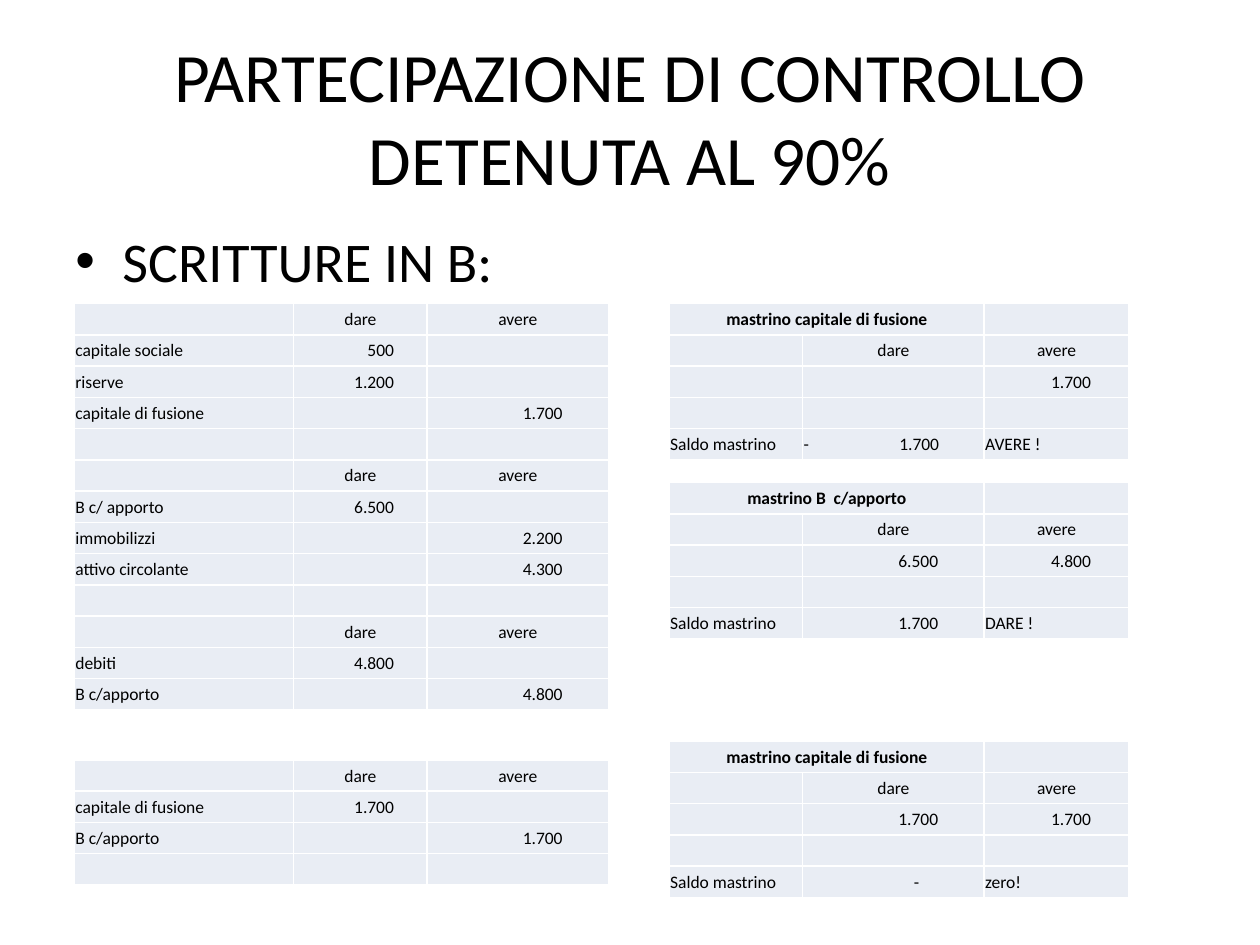
"""Build a slide of merger journal entries and ledger accounts."""
from dataclasses import dataclass

from lxml import etree
from pptx import Presentation
from pptx.dml.color import RGBColor
from pptx.enum.text import MSO_ANCHOR, MSO_AUTO_SIZE, PP_ALIGN
from pptx.oxml.ns import qn
from pptx.util import Cm, Pt

LEFT, CENTER, RIGHT = PP_ALIGN.LEFT, PP_ALIGN.CENTER, PP_ALIGN.RIGHT
MIDDLE, TOP = MSO_ANCHOR.MIDDLE, MSO_ANCHOR.TOP
NO_AUTOFIT = MSO_AUTO_SIZE.NONE
FONT, INK, CELL_FILL = "Calibri", "000000", "E9EDF4"
CELL_SIZE = 10
ROW_HEIGHT = 0.63
CELL_INSET = 0.02
DASH_INDENT = 0.38
HEADINGS = ("", "dare", "avere")
BLANK = ("", "", "")


@dataclass(frozen=True)
class Columns:
    """Left edge, widths and right insets of numbers, in centimetres."""
    left: float
    widths: tuple[float, ...]
    number_insets: tuple[float, ...]


@dataclass(frozen=True)
class Ledger:
    """A table of accounting rows, optionally under a merged title."""
    columns: Columns
    top: float
    rows: tuple[tuple[str, ...], ...]
    titled: bool = False


JOURNAL = Columns(1.5, (4.42, 2.69, 3.66), (0, 0.67, 0.93))
ACCOUNT = Columns(13.49, (2.69, 3.66, 2.92), (0, 0.93, 0.77))


def account(top: float, title: str, debit: str, credit: str,
            balance: str, verdict: str) -> Ledger:
    """Describe one T-account with its closing balance."""
    rows = ((title, "", ""), HEADINGS, ("", debit, credit), BLANK,
            ("Saldo mastrino", balance, verdict))
    return Ledger(ACCOUNT, top, rows, titled=True)


LEDGERS = (
    Ledger(JOURNAL, 6.12, (
        HEADINGS,
        ("capitale sociale", "500", ""),
        ("riserve", "1.200", ""),
        ("capitale di fusione", "", "1.700"),
        BLANK,
        HEADINGS,
        ("B c/ apporto", "6.500", ""),
        ("immobilizzi", "", "2.200"),
        ("attivo circolante", "", "4.300"),
        BLANK,
        HEADINGS,
        ("debiti", "4.800", ""),
        ("B c/apporto", "", "4.800"),
    )),
    account(6.12, "mastrino capitale di fusione", "", "1.700", "-\t1.700", "AVERE !"),
    account(9.73, "mastrino B  c/apporto", "6.500", "4.800", "1.700", "DARE !"),
    Ledger(JOURNAL, 15.32, (
        HEADINGS,
        ("capitale di fusione", "1.700", ""),
        ("B c/apporto", "", "1.700"),
        BLANK,
    )),
    account(14.94, "mastrino capitale di fusione", "1.700", "1.700", "-", "zero!"),
)


def color(value: str) -> RGBColor:
    """Turn a hex string into a colour."""
    return RGBColor.from_string(value)


def style_paragraph(paragraph, size: float, align=LEFT, bold: bool = False) -> None:
    """Set the font and alignment of a paragraph."""
    paragraph.alignment = align
    paragraph.font.name = FONT
    paragraph.font.size = Pt(size)
    paragraph.font.bold = bold
    paragraph.font.color.rgb = color(INK)


def add_right_tab(paragraph, position: float) -> None:
    """Give a paragraph a right-aligned tab stop."""
    properties = paragraph._p.get_or_add_pPr()
    tabs = etree.Element(qn("a:tabLst"))
    etree.SubElement(tabs, qn("a:tab"), pos=str(Cm(position)), algn="r")
    properties.find(qn("a:defRPr")).addprevious(tabs)


def fill_cell(cell, text: str, width: float, number_inset: float, title: bool) -> None:
    """Write and format one table cell."""
    cell.fill.solid()
    cell.fill.fore_color.rgb = color(CELL_FILL)
    cell.vertical_anchor = MIDDLE
    cell.margin_left = cell.margin_right = cell.margin_top = Cm(CELL_INSET)
    cell.margin_bottom = Cm(0)
    cell.text = text
    paragraph = cell.text_frame.paragraphs[0]
    align = LEFT
    if title or text in HEADINGS:
        align = CENTER
    elif text == "-" or text[0].isdigit():
        align = RIGHT
        cell.margin_right = Cm(number_inset + (DASH_INDENT if text == "-" else 0))
    style_paragraph(paragraph, CELL_SIZE, align, title)
    if "\t" in text:
        add_right_tab(paragraph, width - number_inset)
    if not text:
        paragraph._p.get_or_add_endParaRPr().set("sz", str(CELL_SIZE * 100))


def draw_ledger(page, ledger: Ledger) -> None:
    """Draw one ledger as a table."""
    columns, rows = ledger.columns, ledger.rows
    table = page.shapes.add_table(
        len(rows), len(columns.widths), Cm(columns.left), Cm(ledger.top),
        Cm(sum(columns.widths)), Cm(ROW_HEIGHT * len(rows))).table
    table.first_row = table.horz_banding = False
    for column, width in zip(table.columns, columns.widths):
        column.width = Cm(width)
    for row_index, texts in enumerate(rows):
        table.rows[row_index].height = Cm(ROW_HEIGHT)
        for index, text in enumerate(texts):
            title = ledger.titled and row_index == 0 and index == 0
            fill_cell(table.cell(row_index, index), text, columns.widths[index],
                      columns.number_insets[index], title)
    if ledger.titled:
        table.cell(0, 0).merge(table.cell(0, 1))


def draw_title(page) -> None:
    """Place and format the slide title."""
    title = page.shapes.title
    title.left, title.top, title.width, title.height = Cm(1.27), Cm(0.76), Cm(22.86), Cm(3.18)
    frame = title.text_frame
    frame.text = "PARTECIPAZIONE DI CONTROLLO DETENUTA AL 90%"
    frame.auto_size = NO_AUTOFIT
    frame.vertical_anchor = MIDDLE
    style_paragraph(frame.paragraphs[0], 39.6, CENTER)


def draw_bullet(page) -> None:
    """Draw the bulleted line above the tables."""
    box = page.shapes.add_textbox(Cm(1.27), Cm(4.45), Cm(22.86), Cm(12.57))
    frame = box.text_frame
    frame.word_wrap = True
    frame.vertical_anchor = TOP
    frame.text = "SCRITTURE IN B:"
    paragraph = frame.paragraphs[0]
    style_paragraph(paragraph, 32)
    properties = paragraph._p.get_or_add_pPr()
    properties.set("marL", str(Cm(0.95)))
    properties.set("indent", str(Cm(-0.95)))
    font = properties.find(qn("a:defRPr"))
    for tag, name, value in (("a:buFont", "typeface", "Arial"), ("a:buChar", "char", "•")):
        bullet = etree.Element(qn(tag))
        bullet.set(name, value)
        font.addprevious(bullet)


def main() -> None:
    """Build and save the deck."""
    deck = Presentation()
    deck.slide_width, deck.slide_height = Cm(25.4), Cm(19.05)
    page = deck.slides.add_slide(deck.slide_layouts.get_by_name("Title Only"))
    draw_title(page)
    draw_bullet(page)
    for ledger in LEDGERS:
        draw_ledger(page, ledger)
    deck.save("out.pptx")


if __name__ == "__main__":
    main()
